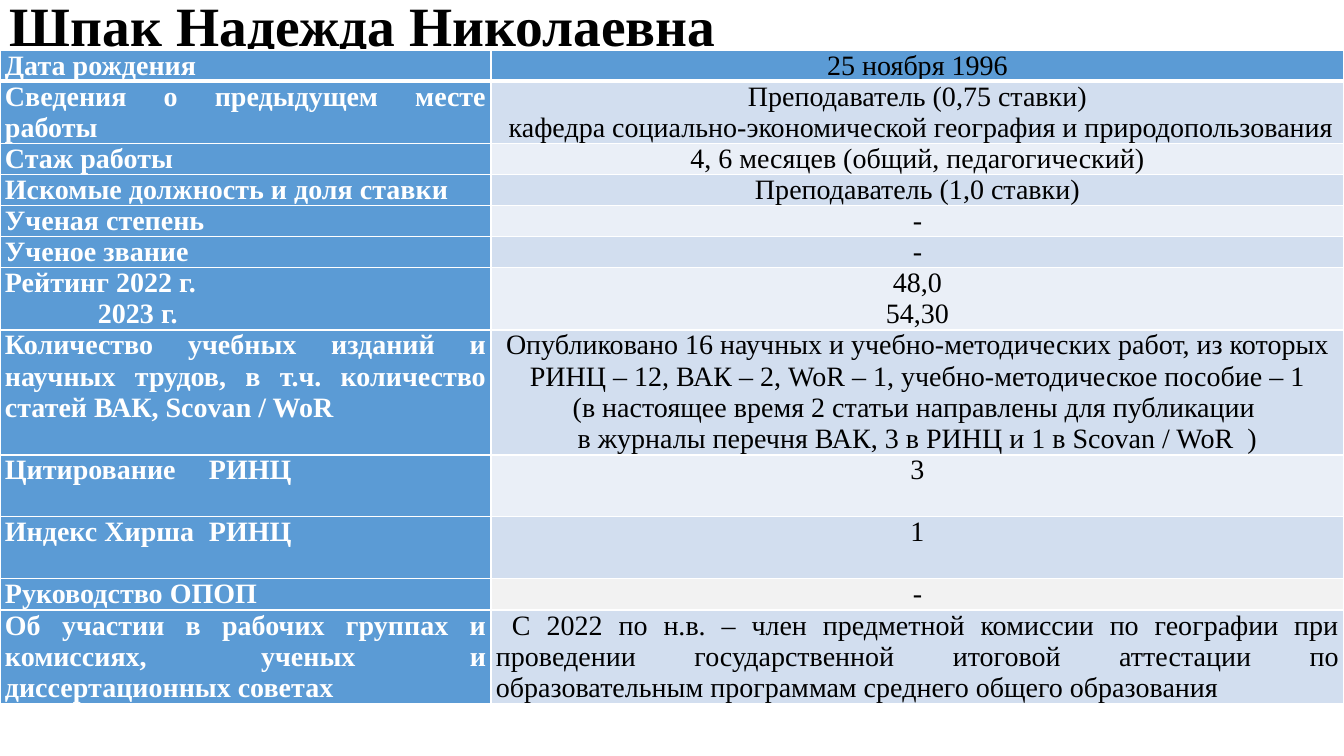
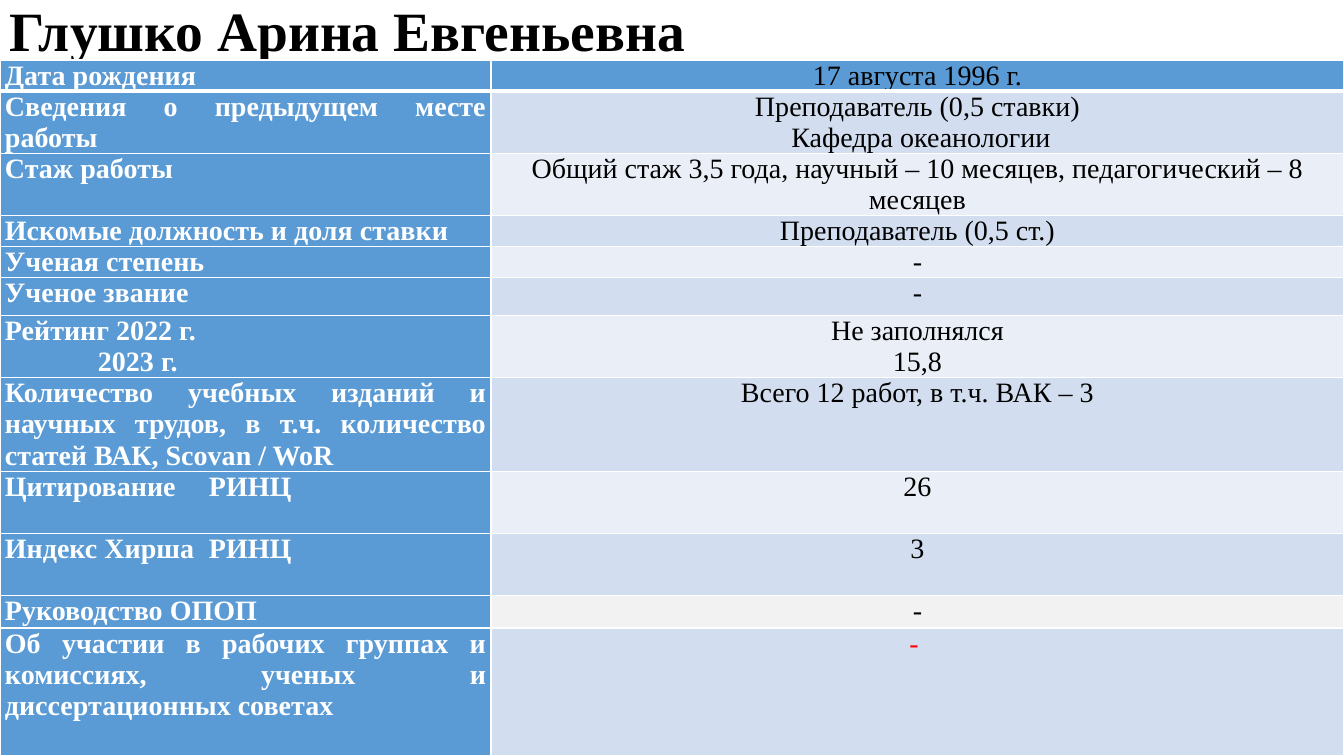
from lxml import etree
from pptx import Presentation
from pptx.dml.color import RGBColor
from pptx.enum.text import MSO_ANCHOR, PP_ALIGN
from pptx.oxml.ns import qn
from pptx.util import Emu, Pt

JUSTIFY, CENTER = PP_ALIGN.JUSTIFY, PP_ALIGN.CENTER
MIDDLE = MSO_ANCHOR.MIDDLE

BLACK = RGBColor(0x00, 0x00, 0x00)
WHITE = RGBColor(0xFF, 0xFF, 0xFF)
RED = RGBColor(0xFF, 0x00, 0x00)
BLUE = RGBColor(0x5B, 0x9B, 0xD5)
BANDS = (RGBColor(0xEA, 0xEF, 0xF7), RGBColor(0xD2, 0xDE, 0xEF))
GREY = RGBColor(0xF2, 0xF2, 0xF2)

FONT = "Times New Roman"
TITLE_SIZE, BODY_SIZE = 39.6, 20
BODY_LEADING = 22.2
PAGE_SIZE = (1344, 756)
TITLE_SIZE_PX = (982, 67)
COLUMNS = (491, 853)
CELL_INSET = 5
LABEL_TABS = (93, 204)
GREY_ROW = 10
THIN, THICK = 1, 3

# One tuple of paragraphs per table row
LABELS = (
    ("Дата рождения",),
    ("Сведения о предыдущем месте работы",),
    ("Стаж работы",),
    ("Искомые должность и доля ставки",),
    ("Ученая степень",),
    ("Ученое звание",),
    ("Рейтинг 2022 г.", "\t2023 г."),
    ("Количество учебных изданий и научных трудов, в т.ч. количество "
     "статей ВАК, Scovan / WoR",),
    ("Цитирование\tРИНЦ",),
    ("Индекс Хирша\tРИНЦ",),
    ("Руководство ОПОП",),
    ("Об участии в рабочих группах и комиссиях, ученых и "
     "диссертационных советах",),
)

PEOPLE = (
    {
        "name": "Шпак Надежда Николаевна",
        "title_top": -5,
        "table_top": 50,
        "heights": (31, 62, 31, 31, 31, 31, 62, 125, 62, 62, 31, 93),
        "values": (
            ("25 ноября 1996",),
            ("Преподаватель (0,75 ставки)",
             " кафедра социально-экономической география и природопользования"),
            ("4, 6 месяцев (общий, педагогический)",),
            ("Преподаватель (1,0 ставки)",),
            ("-",),
            ("-",),
            ("48,0", "54,30"),
            ("Опубликовано 16 научных и учебно-методических работ, из которых "
             "РИНЦ – 12, ВАК – 2, WoR – 1, учебно-методическое пособие – 1",
             "(в настоящее время 2 статьи направлены для публикации ",
             "в журналы перечня ВАК, 3 в РИНЦ и 1 в Scovan / WoR  )"),
            ("3",),
            ("1",),
            ("-",),
            ("С 2022 по н.в. – член предметной комиссии по географии при "
             "проведении государственной итоговой аттестации по "
             "образовательным программам среднего общего образования",),
        ),
        "last_value": {"align": JUSTIFY, "indent": 16},
    },
    {
        "name": "Глушко Арина Евгеньевна",
        "title_top": 0,
        "table_top": 60,
        "heights": (31, 62, 62, 31, 31, 38, 62, 93, 62, 62, 33, 128),
        "values": (
            ("17 августа 1996 г.",),
            ("Преподаватель (0,5 ставки)", " Кафедра океанологии"),
            ("Общий стаж 3,5 года, научный – 10 месяцев, "
             "педагогический – 8 месяцев",),
            ("Преподаватель (0,5 ст.)",),
            ("-",),
            ("-",),
            ("Не заполнялся", "15,8"),
            ("Всего 12 работ, в т.ч. ВАК ‒ 3",),
            ("26",),
            ("3",),
            ("-",),
            ("- ",),
        ),
        "last_value": {"color": RED},
    },
)


def px(length):
    return Emu(round(length * 914400 / 100.8))


def add_span(para, text, size, color, bold):
    span = para.add_run()
    span.text = text
    font = span.font
    font.name, font.size, font.bold = FONT, Pt(size), bold
    font.color.rgb = color


def add_title(page, name, top):
    width, height = TITLE_SIZE_PX
    box = page.shapes.add_textbox(0, px(top), px(width), px(height))
    frame = box.text_frame
    frame.word_wrap = True
    frame.vertical_anchor = MIDDLE
    para = frame.paragraphs[0]
    para.line_spacing = 0.9
    add_span(para, name, TITLE_SIZE, BLACK, True)


def set_borders(cell, widths):
    """Draw white cell borders; widths maps each side to points."""
    props = cell._tc.get_or_add_tcPr()
    for side, width in widths.items():
        line = etree.SubElement(props, qn(f"a:ln{side}"), w=str(Pt(width)))
        fill = etree.SubElement(line, qn("a:solidFill"))
        etree.SubElement(fill, qn("a:srgbClr"), val=str(WHITE))


def set_tabs(para, stops):
    tabs = etree.SubElement(para._p.get_or_add_pPr(), qn("a:tabLst"))
    for stop in stops:
        etree.SubElement(tabs, qn("a:tab"), pos=str(px(stop)), algn="l")


def fill_cell(cell, texts, fill, borders, align=CENTER, color=BLACK,
              bold=False, indent=0, tabs=()):
    cell.margin_left = cell.margin_right = px(CELL_INSET)
    cell.margin_top = cell.margin_bottom = 0
    set_borders(cell, borders)
    cell.fill.solid()
    cell.fill.fore_color.rgb = fill
    frame = cell.text_frame
    for index, text in enumerate(texts):
        para = frame.add_paragraph() if index else frame.paragraphs[0]
        para.alignment = align
        para.line_spacing = Pt(BODY_LEADING)
        if indent:
            para._p.get_or_add_pPr().set("indent", str(px(indent)))
        if "\t" in text:
            set_tabs(para, tabs)
        add_span(para, text, BODY_SIZE, color, bold)


def value_fill(row):
    if row == 0:
        return BLUE
    return GREY if row == GREY_ROW else BANDS[row % 2]


def add_profile(page, person):
    heights = person["heights"]
    table = page.shapes.add_table(
        len(LABELS), len(COLUMNS), 0, px(person["table_top"]),
        px(sum(COLUMNS)), px(sum(heights))).table
    table.first_row = table.horz_banding = False
    for column, width in zip(table.columns, COLUMNS):
        column.width = px(width)

    last = len(LABELS) - 1
    for row, (label, value) in enumerate(zip(LABELS, person["values"])):
        table.rows[row].height = px(heights[row])
        borders = {"L": THIN, "R": THIN,
                   "T": THICK if row == 1 else THIN,
                   "B": THICK if row == 0 else THIN}
        fill_cell(table.cell(row, 0), label, BLUE, borders, align=JUSTIFY,
                  color=WHITE, bold=True, tabs=LABEL_TABS)
        style = person["last_value"] if row == last else {}
        fill_cell(table.cell(row, 1), value, value_fill(row), borders, **style)


def main():
    deck = Presentation()
    deck.slide_width, deck.slide_height = map(px, PAGE_SIZE)
    blank = deck.slide_layouts[6]
    for person in PEOPLE:
        page = deck.slides.add_slide(blank)
        add_title(page, person["name"], person["title_top"])
        add_profile(page, person)
    deck.save("out.pptx")


if __name__ == "__main__":
    main()
